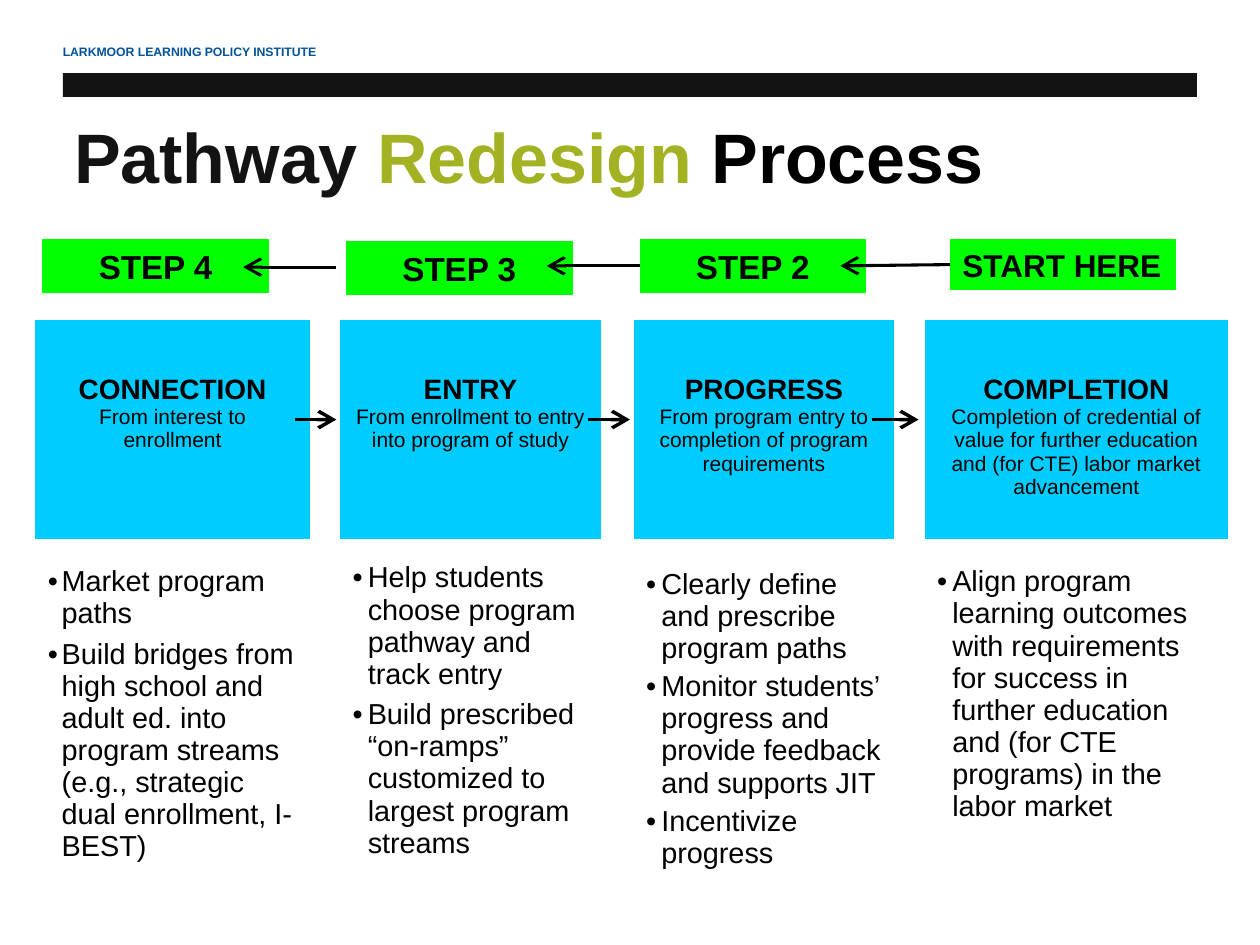
"""Build the Pathway Redesign Process slide."""
from pptx import Presentation
from pptx import util as u
from pptx.dml.color import RGBColor
from pptx.enum import shapes, text
from pptx.oxml.ns import qn
from lxml import etree

BLACK = RGBColor(0x00, 0x00, 0x00)
INK = RGBColor(0x14, 0x13, 0x13)
NAVY = RGBColor(0x00, 0x53, 0x9B)
OLIVE = RGBColor(0xA3, 0xB2, 0x22)
GREEN = RGBColor(0x00, 0xFF, 0x00)
SKY = RGBColor(0x00, 0xCC, 0xFF)
NO_STYLE = "{2D5ABB26-0587-4C30-8999-92F81FD0307C}"
CENTER, LEFT = text.PP_ALIGN.CENTER, text.PP_ALIGN.LEFT

HEADER = "LARKMOOR LEARNING POLICY INSTITUTE"
TITLE = [("Pathway ", INK), ("Redesign ", OLIVE), ("Process", BLACK)]
STAGES = [
    {"name": "CONNECTION", "scope": "From interest to enrollment",
     "actions": ["Market program paths",
                 "Build bridges from high school and adult ed. into program streams "
                 "(e.g., strategic dual enrollment, I-BEST)"],
     "top": 0.21, "gap": 4.6, "indent": 0.11},
    {"name": "ENTRY", "scope": "From enrollment to entry into program of study",
     "actions": ["Help students choose program pathway and track entry",
                 "Build prescribed “on-ramps” customized to largest program streams"],
     "top": 0.18, "gap": 4.6, "indent": 0.12},
    {"name": "PROGRESS", "scope": "From program entry to completion of program requirements",
     "actions": ["Clearly define and prescribe program paths",
                 "Monitor students’ progress and provide feedback and supports JIT",
                 "Incentivize progress"],
     "top": 0.23, "gap": 3.4, "indent": 0.12},
    {"name": "COMPLETION",
     "scope": "Completion of credential of value for further education "
              "and (for CTE) labor market advancement",
     "actions": ["Align program learning outcomes with requirements for success in "
                 "further education and (for CTE programs) in the labor market"],
     "top": 0.21, "gap": 4.6, "indent": 0.12},
]
COLUMNS = [2.18, 0.23, 2.07, 0.26, 2.07, 0.23, 2.41]
ROWS = [1.74, 3.03, 0.69]
TABLE_LEFT, TABLE_TOP = 0.28, 2.54
STEP_WIDTH = 1.79
STEPS = [("STEP 4", 0.34, 1.9, 0.42, 19, CENTER), ("STEP 3", 2.75, 1.92, 0.42, 19, CENTER),
         ("STEP 2", 5.08, 1.9, 0.42, 19, CENTER), ("START HERE", 7.54, 1.9, 0.4, 18, LEFT)]
BACK_ARROWS = [(2.67, 2.12, 1.93, 2.12), (5.08, 2.11, 4.34, 2.11), (7.54, 2.1, 6.67, 2.11)]
FORWARD_ARROWS = [(2.34, 3.33, 2.67, 3.33), (4.67, 3.33, 5, 3.33), (6.92, 3.33, 7.29, 3.33)]


def write(frame, content, size, color=BLACK, bold=False, align=LEFT, gap=0, first=False):
    """Add a paragraph of text, or of (text, colour) runs, and return it."""
    paragraph = frame.paragraphs[0] if first else frame.add_paragraph()
    paragraph.alignment = align
    paragraph.space_after = u.Pt(gap)
    for words, run_color in [(content, color)] if isinstance(content, str) else content:
        run = paragraph.add_run()
        run.text = words
        run.font.name, run.font.size, run.font.bold = "Arial", u.Pt(size), bold
        run.font.color.rgb = run_color
    return paragraph


def add_bullet(paragraph, indent):
    properties = paragraph._p.get_or_add_pPr()
    properties.set("marL", str(u.Inches(indent)))
    properties.set("indent", str(-u.Inches(indent)))
    etree.SubElement(properties, qn("a:buFont")).set("typeface", "Arial")
    etree.SubElement(properties, qn("a:buChar")).set("char", "•")


def add_text_box(slide, box, content, size, anchor, **style):
    frame = slide.shapes.add_textbox(*map(u.Inches, box)).text_frame
    frame.word_wrap = True
    frame.vertical_anchor = anchor
    write(frame, content, size, first=True, bold=True, **style)


def add_rectangle(slide, box, color, line_width=0):
    shape = slide.shapes.add_shape(shapes.MSO_SHAPE.RECTANGLE, *map(u.Inches, box))
    shape.shadow.inherit = False
    shape.fill.solid()
    shape.fill.fore_color.rgb = color
    if line_width:
        shape.line.color.rgb = color
        shape.line.width = u.Pt(line_width)
    else:
        shape.line.fill.background()
    return shape


def add_arrow(slide, ends, width):
    arrow = slide.shapes.add_connector(shapes.MSO_CONNECTOR.STRAIGHT, *map(u.Inches, ends))
    arrow.line.color.rgb = BLACK
    arrow.line.width = u.Pt(width)
    properties = arrow.element.spPr
    head = etree.SubElement(properties.find(qn("a:ln")), qn("a:tailEnd"))
    for name, value in [("type", "arrow"), ("w", "lg"), ("len", "lg")]:
        head.set(name, value)
    etree.SubElement(properties, qn("a:effectLst"))


def add_stage_table(slide):
    box = (TABLE_LEFT, TABLE_TOP, sum(COLUMNS), sum(ROWS))
    graphic = slide.shapes.add_table(len(ROWS), len(COLUMNS), *map(u.Inches, box))
    table = graphic.table
    table.first_row = table.horz_banding = False
    for style in graphic.element.iter(qn("a:tableStyleId")):
        style.text = NO_STYLE
    for column, width in zip(table.columns, COLUMNS):
        column.width = u.Inches(width)
    for row, height in zip(table.rows, ROWS):
        row.height = u.Inches(height)
    for cell in table.iter_cells():
        cell.fill.background()
    for index, stage in enumerate(STAGES):
        heading, details = table.cell(0, 2 * index), table.cell(1, 2 * index)
        heading.fill.solid()
        heading.fill.fore_color.rgb = SKY
        heading.margin_top = u.Inches(0.43)
        write(heading.text_frame, stage["name"], 16, bold=True, align=CENTER, first=True)
        write(heading.text_frame, stage["scope"], 12, align=CENTER)
        details.margin_top = u.Inches(stage["top"])
        for number, action in enumerate(stage["actions"]):
            paragraph = write(details.text_frame, action, 16.5,
                              gap=stage["gap"], first=number == 0)
            add_bullet(paragraph, stage["indent"])


def main():
    presentation = Presentation()
    presentation.slide_width, presentation.slide_height = u.Inches(10), u.Inches(7.5)
    slide = presentation.slides.add_slide(presentation.slide_layouts[6])
    add_rectangle(slide, (0.5, 0.58, 9, 0.19), INK)
    add_text_box(slide, (0.4, 0.3, 3.56, 0.22), HEADER, 7, text.MSO_ANCHOR.MIDDLE, color=NAVY)
    add_text_box(slide, (0.49, 0.85, 8.45, 1.25), TITLE, 40, text.MSO_ANCHOR.TOP)
    add_stage_table(slide)
    for ends in FORWARD_ARROWS:
        add_arrow(slide, ends, 2)
    for label, left, top, height, size, align in STEPS:
        step = add_rectangle(slide, (left, top, STEP_WIDTH, height), GREEN, 0.5)
        step.text_frame.word_wrap = False
        write(step.text_frame, label, size, bold=True, align=align, first=True)
    for ends in BACK_ARROWS:
        add_arrow(slide, ends, 1.75)
    presentation.save("out.pptx")


if __name__ == "__main__":
    main()
